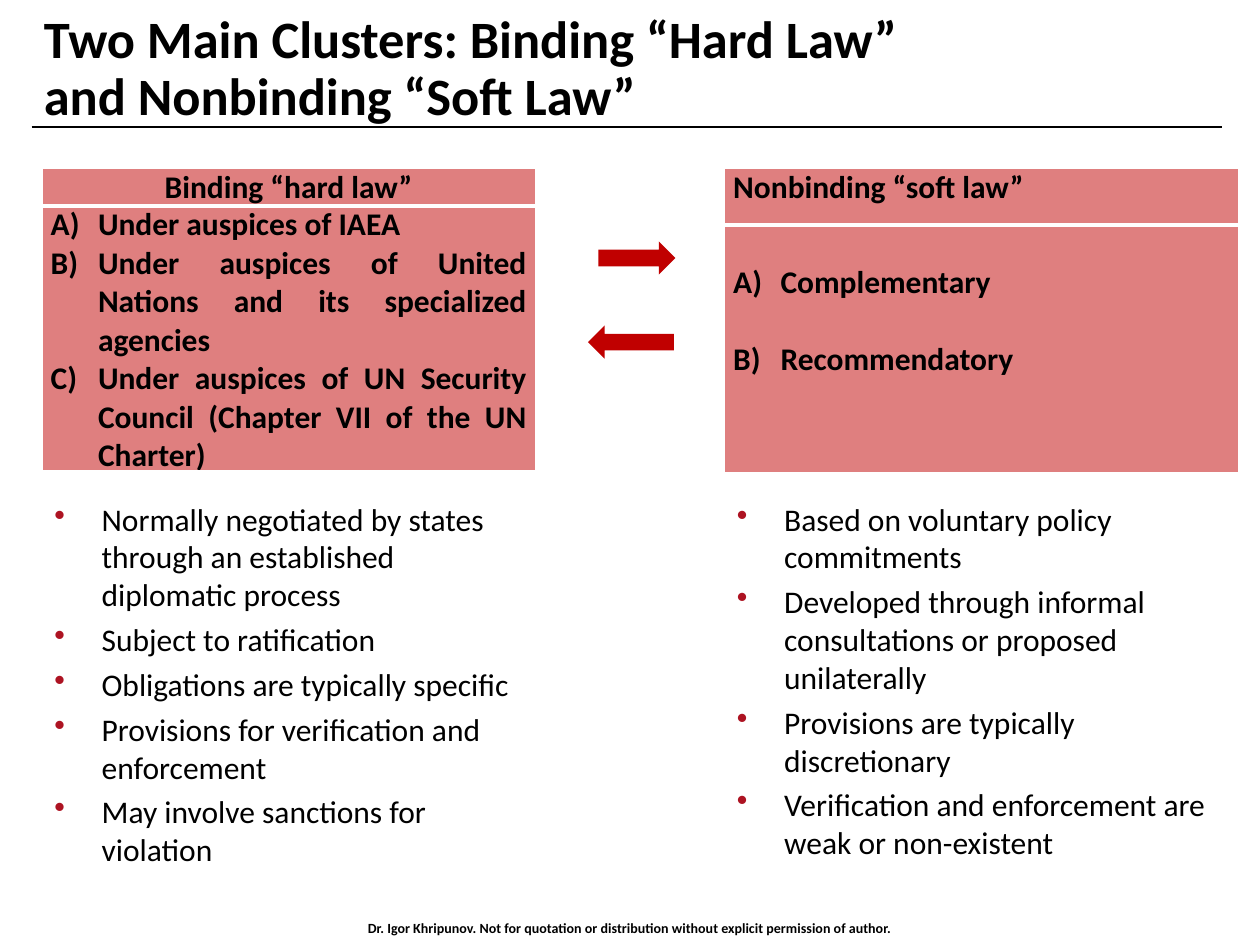
import pptx
import pptx.dml.color
import pptx.enum.shapes
import pptx.enum.text
import pptx.oxml
import pptx.oxml.ns
import pptx.util
from lxml import etree

Pt = pptx.util.Pt
Align = pptx.enum.text.PP_ALIGN
Anchor = pptx.enum.text.MSO_ANCHOR
Shape = pptx.enum.shapes.MSO_SHAPE
qn = pptx.oxml.ns.qn

COLORS = {"text": "000000", "accent": "C00000", "bullet": "AD1322", "border": "FFFFFF"}
HANGING = 27
LEFT, RIGHT = 24, 414


def rgb(name):
    """Return the named colour."""
    return pptx.dml.color.RGBColor.from_string(COLORS[name])


class SlideBuilder:
    """Hold the style and the current slide, and add its elements."""

    def __init__(self, slide, font="Calibri", size=18):
        self.slide = slide
        self.font = font
        self.size = size

    def style(self, paragraph, size=None, bold=False, align=Align.LEFT):
        """Format a paragraph and its runs."""
        paragraph.alignment = align
        for run in paragraph.runs:
            run.font.name = self.font
            run.font.size = Pt(size or self.size)
            run.font.bold = bold
            run.font.color.rgb = rgb("text")

    def hang(self, paragraph, marker, **attributes):
        """Give a paragraph a hanging indent and a list marker."""
        properties = paragraph._p.get_or_add_pPr()
        properties.set("marL", str(Pt(HANGING)))
        properties.set("indent", str(-Pt(HANGING)))
        if marker == "buChar":
            color = etree.SubElement(properties, qn("a:buClr"))
            etree.SubElement(color, qn("a:srgbClr"), val=COLORS["bullet"])
        etree.SubElement(properties, qn("a:" + marker), **attributes)

    def text_box(self, left, top, width, height, text):
        """Add a wrapping text box and return its frame."""
        shape = self.slide.shapes.add_textbox(Pt(left), Pt(top), Pt(width), Pt(height))
        frame = shape.text_frame
        frame.word_wrap = True
        frame.text = text
        return frame

    def title(self, left, top, width, height, text):
        """Add the slide title."""
        frame = self.text_box(left, top, width, height, text)
        frame.vertical_anchor = Anchor.BOTTOM
        frame.margin_top = 0
        frame.paragraphs[0].line_spacing = 0.9
        self.style(frame.paragraphs[0], 30, True)

    def footer(self, left, top, width, height, text):
        """Add the centred footer."""
        frame = self.text_box(left, top, width, height, text)
        self.style(frame.paragraphs[0], 8, True, Align.CENTER)

    def bullets(self, left, top, width, height, items):
        """Add a bulleted list."""
        frame = self.text_box(left, top, width, height, "\n".join(items))
        for index, paragraph in enumerate(frame.paragraphs):
            paragraph.space_before = Pt(2 if index else 0)
            paragraph.space_after = Pt(2)
            self.hang(paragraph, "buChar", char="•")
            self.style(paragraph)

    def rule(self, left, right, top):
        """Add a horizontal line."""
        line = self.slide.shapes.add_connector(
            pptx.enum.shapes.MSO_CONNECTOR.STRAIGHT, Pt(left), Pt(top), Pt(right), Pt(top))
        line.line.color.rgb = rgb("text")
        line.line.width = Pt(1.5)
        etree.SubElement(line._element.spPr, qn("a:effectLst"))

    def arrow(self, kind, left, top, width, height):
        """Add a block arrow."""
        shape = self.slide.shapes.add_shape(kind, Pt(left), Pt(top), Pt(width), Pt(height))
        shape.shadow.inherit = False
        shape.fill.solid()
        shape.fill.fore_color.rgb = rgb("accent")
        shape.line.fill.background()

    def cell(self, cell, text, top_border, bottom_border):
        """Fill a table cell with text, borders and a translucent colour."""
        cell.text_frame.text = text
        cell.margin_left = cell.margin_right = Pt(5)
        cell.margin_top = cell.margin_bottom = 0
        properties = cell._tc.get_or_add_tcPr()
        borders = {"lnL": 1, "lnR": 1, "lnT": top_border, "lnB": bottom_border}
        for side, width in borders.items():
            border = etree.SubElement(properties, qn("a:" + side), w=str(Pt(width)))
            fill = etree.SubElement(border, qn("a:solidFill"))
            etree.SubElement(fill, qn("a:srgbClr"), val=COLORS["border"])
        cell.fill.solid()
        cell.fill.fore_color.rgb = rgb("accent")
        color = properties.find(qn("a:solidFill")).find(qn("a:srgbClr"))
        etree.SubElement(color, qn("a:alpha"), val="50000")

    def table(self, left, top, width, rows, header, align, items, gap=0):
        """Add a one-column table with a header and a lettered list."""
        frame = self.slide.shapes.add_table(2, 1, Pt(left), Pt(top), Pt(width), Pt(sum(rows)))
        table = frame.table
        for row, height in zip(table.rows, rows):
            row.height = Pt(height)
        head, body = table.cell(0, 0), table.cell(1, 0)
        self.cell(head, header, 1, 3)
        self.style(head.text_frame.paragraphs[0], bold=True, align=align)
        self.cell(body, "\n".join(items), 3, 1)
        body.margin_top = Pt(gap)
        for index, paragraph in enumerate(body.text_frame.paragraphs):
            paragraph.space_before = Pt(gap if index else 0)
            self.hang(paragraph, "buAutoNum", type="alphaUcParenR")
            self.style(paragraph, bold=True, align=Align.JUSTIFY)


def main():
    """Build and save the slide."""
    presentation = pptx.Presentation()
    presentation.slide_width, presentation.slide_height = Pt(720), Pt(540)
    builder = SlideBuilder(presentation.slides.add_slide(presentation.slide_layouts[6]))

    builder.rule(18, 698.5, 72.5)
    builder.footer(0, 522, 720, 17, "Dr. Igor Khripunov. Not for quotation or distribution "
                   "without explicit permission of author.")
    builder.title(18, 6, 648, 70,
                  "Two Main Clusters: Binding “Hard Law” \vand Nonbinding “Soft Law”")
    builder.bullets(LEFT, 282, 282, 228, [
        "Normally negotiated by states through an established diplomatic process",
        "Subject to ratification",
        "Obligations are typically specific",
        "Provisions for verification and enforcement",
        "May involve sanctions for violation",
    ])
    builder.bullets(RIGHT, 282, 292, 228, [
        "Based on voluntary policy commitments",
        "Developed through informal consultations or proposed unilaterally",
        "Provisions are typically discretionary",
        "Verification and enforcement are weak or non-existent",
    ])
    builder.table(LEFT, 96, 282, (21.6, 151.2), "Binding “hard law”", Align.CENTER, [
        "Under auspices of IAEA",
        "Under auspices of United Nations and its specialized agencies",
        "Under auspices of UN Security Council (Chapter VII of the UN Charter)",
    ])
    builder.arrow(Shape.LEFT_ARROW, 336, 186, 49, 19)
    builder.arrow(Shape.RIGHT_ARROW, 342, 138, 44, 19)
    builder.table(RIGHT, 96, 294, (32.5, 141.5), "Nonbinding “soft law”", Align.JUSTIFY,
                  ["Complementary", "Recommendatory"], gap=22)
    presentation.save("out.pptx")


if __name__ == "__main__":
    main()
